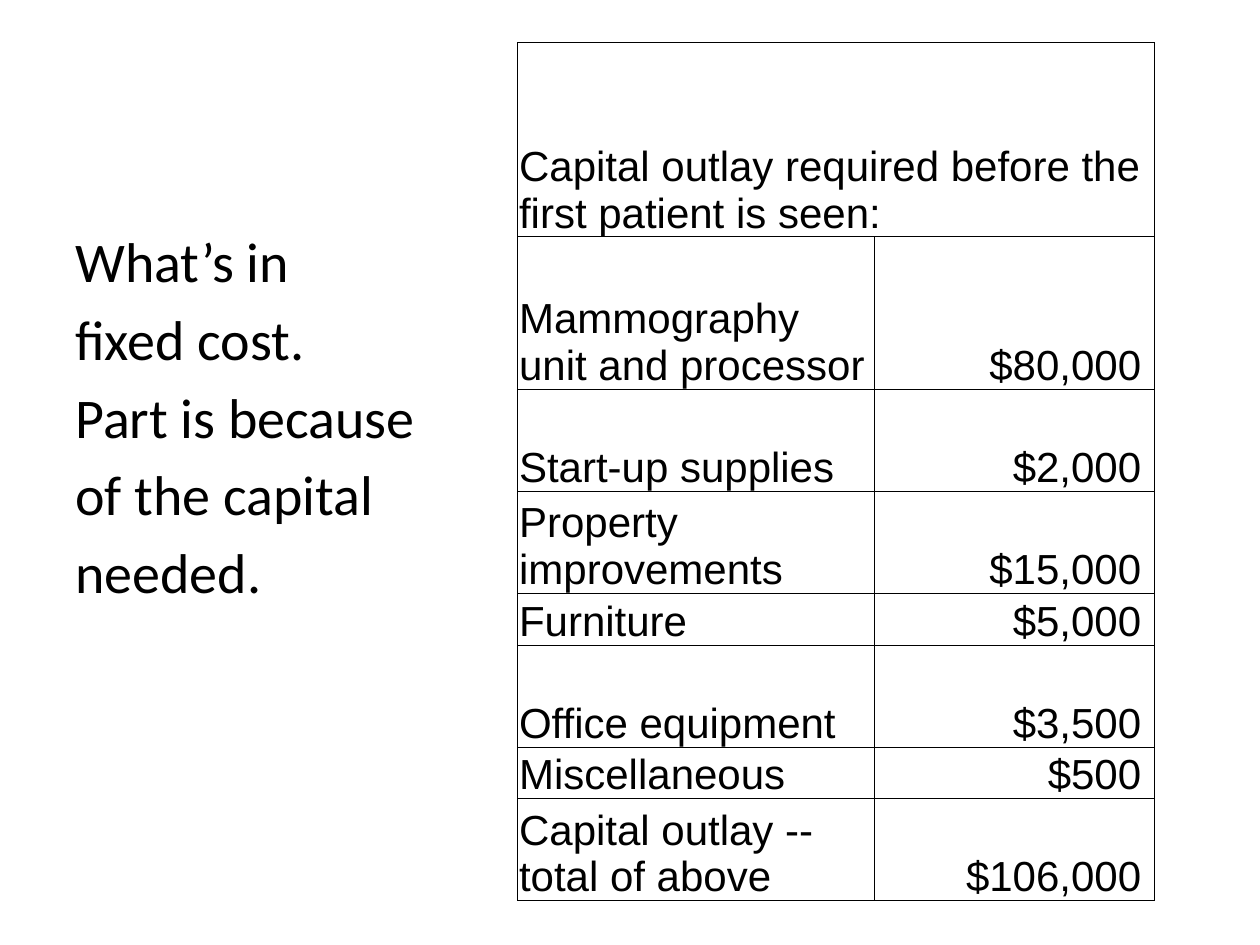
from lxml import etree
from pptx import Presentation
from pptx.dml.color import RGBColor
from pptx.enum.text import MSO_ANCHOR, PP_ALIGN
from pptx.oxml.ns import qn
from pptx.util import Inches, Pt

BOTTOM = MSO_ANCHOR.BOTTOM
LEFT, RIGHT = PP_ALIGN.LEFT, PP_ALIGN.RIGHT
COLORS = {"ink": "000000"}

NOTES = ["What’s in", "fixed cost.", "Part is because",
         "of the capital", "needed."]
TITLE = "Capital outlay required before the first patient is seen:"
COSTS = [  # label, dollars, row height
    ("Mammography unit and processor", 80000, 1.21),
    ("Start-up supplies", 2000, 0.81),
    ("Property improvements", 15000, 0.81),
    ("Furniture", 5000, 0.41),
    ("Office equipment", 3500, 0.81),
    ("Miscellaneous", 500, 0.41),
    ("Capital outlay -- total of above", 106000, 0.81),
]
TITLE_HIGH = 1.54
WIDTHS = [2.83, 2.22]


def style(para, face, size, align=LEFT):
    para.alignment = align
    para.font.name = face
    para.font.size = Pt(size)
    para.font.color.rgb = RGBColor.from_string(COLORS["ink"])


def add_border(cell):
    """Put a thin line on all four sides of a cell."""
    props = cell._tc.get_or_add_tcPr()
    for spot, side in enumerate(("lnL", "lnR", "lnT", "lnB")):
        line = etree.Element(qn(f"a:{side}"), w=str(Pt(0.5)))
        fill = etree.SubElement(line, qn("a:solidFill"))
        etree.SubElement(fill, qn("a:srgbClr"), val=COLORS["ink"])
        props.insert(spot, line)


def fill_cell(cell, text, align):
    cell.text = text
    cell.vertical_anchor = BOTTOM
    cell.margin_left = cell.margin_right = cell.margin_top = Inches(0.01)
    cell.margin_bottom = 0
    style(cell.text_frame.paragraphs[0], "Arial", 24, align)


def add_costs(slide):
    highs = [TITLE_HIGH] + [high for _, _, high in COSTS]
    table = slide.shapes.add_table(
        len(highs), len(WIDTHS), Inches(4.11), Inches(0.34),
        Inches(sum(WIDTHS)), Inches(sum(highs))).table
    table.first_row = table.horz_banding = False
    for col, wide in zip(table.columns, WIDTHS):
        col.width = Inches(wide)
    for row, high in zip(table.rows, highs):
        row.height = Inches(high)
    for cell in table.iter_cells():
        cell.fill.background()
        add_border(cell)

    table.cell(0, 0).merge(table.cell(0, 1))
    fill_cell(table.cell(0, 0), TITLE, LEFT)
    for row, (label, cost, _) in enumerate(COSTS, 1):
        fill_cell(table.cell(row, 0), label, LEFT)
        fill_cell(table.cell(row, 1), f"${cost:,} ", RIGHT)


def add_notes(slide):
    box = slide.shapes.add_textbox(
        Inches(0.5), Inches(1.75), Inches(9), Inches(4.95))
    frame = box.text_frame
    frame.word_wrap = True
    frame.text = "\n".join(NOTES)
    for para in frame.paragraphs:
        style(para, "Calibri", 32)
        para.space_before = Pt(6)
        props = para._p.get_or_add_pPr()
        props.set("marL", str(Inches(0.38)))
        props.set("indent", str(Inches(-0.38)))


def main():
    deck = Presentation()
    deck.slide_width, deck.slide_height = Inches(10), Inches(7.5)
    slide = deck.slides.add_slide(deck.slide_layouts[6])
    add_costs(slide)
    add_notes(slide)
    deck.save("out.pptx")


if __name__ == "__main__":
    main()
